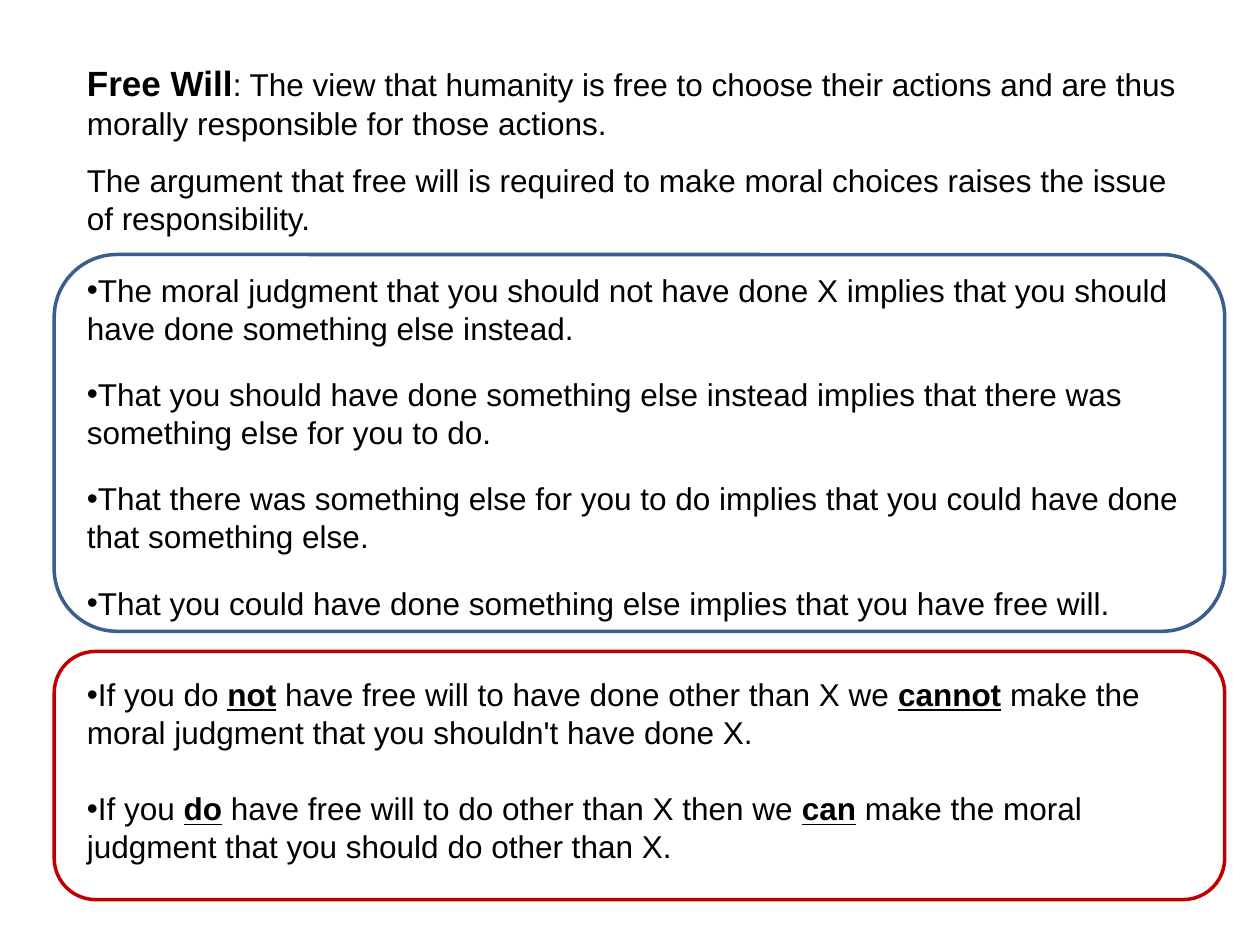
from dataclasses import dataclass

from lxml.etree import SubElement
from pptx import Presentation
from pptx.dml.color import RGBColor
from pptx.enum.shapes import MSO_SHAPE as Shape
from pptx.enum.text import MSO_ANCHOR as Anchor, MSO_AUTO_SIZE as AutoSize, PP_ALIGN as Align
from pptx.oxml.ns import qn
from pptx.util import Inches, Pt


@dataclass(frozen=True)
class Theme:
    font: str = "Arial"
    text: RGBColor = RGBColor(0, 0, 0)
    premises: RGBColor = RGBColor(0x3A, 0x5F, 0x8C)
    conclusions: RGBColor = RGBColor(0xC0, 0, 0)
    term_size: float = 20
    body_size: float = 18
    line_width: float = 2


@dataclass(frozen=True)
class Area:
    left: float
    top: float
    width: float
    height: float

    def inches(self) -> tuple:
        return tuple(Inches(n) for n in (self.left, self.top, self.width, self.height))


@dataclass(frozen=True)
class Span:
    text: str
    bold: bool = False
    underline: bool = False
    size: float | None = None


@dataclass(frozen=True)
class TextBlock:
    area: Area
    paragraphs: list[list[Span]]
    gap: float = 0
    bulleted: bool = False


@dataclass(frozen=True)
class Frame:
    area: Area
    color: RGBColor


THEME = Theme()


def key(text: str) -> Span:
    """A stressed word in a conclusion."""
    return Span(text, bold=True, underline=True)


# Wording and places
DEFINITION = TextBlock(Area(0.59, 0.44, 8.98, 0.74), [[
    Span("Free Will", bold=True, size=THEME.term_size),
    Span(": The view that humanity is free to choose their actions and are thus "
         "morally responsible for those actions."),
]])
ISSUE = TextBlock(Area(0.59, 1.23, 8.98, 0.71), [[
    Span("The argument that free will is required to make moral choices raises "
         "the issue of responsibility."),
]])
PREMISES = TextBlock(Area(0.59, 2.1, 9.13, 2.81), [
    [Span("The moral judgment that you should not have done X implies that you "
          "should have done something else instead.")],
    [Span("That you should have done something else instead implies that there "
          "was something else for you to do.")],
    [Span("That there was something else for you to do implies that you could "
          "have done that something else.")],
    [Span("That you could have done something else implies that you have free will.")],
], gap=16.4, bulleted=True)
CONCLUSIONS = TextBlock(Area(0.59, 5.31, 9.06, 1.59), [
    [Span("If you do "), key("not"),
     Span(" have free will to have done other than X we "), key("cannot"),
     Span(" make the moral judgment that you shouldn't have done X.")],
    [Span("If you "), key("do"),
     Span(" have free will to do other than X then we "), key("can"),
     Span(" make the moral judgment that you should do other than X.")],
], gap=22, bulleted=True)
FRAMES = [
    Frame(Area(0.43, 2.02, 9.29, 2.99), THEME.premises),
    Frame(Area(0.43, 5.17, 9.29, 1.97), THEME.conclusions),
]


def add_bullet(para) -> None:
    """Put a bullet directly before the text, without a hanging indent."""
    properties = para._p.get_or_add_pPr()
    properties.set("marL", "0")
    properties.set("indent", "0")
    SubElement(properties, qn("a:buFont")).set("typeface", THEME.font)
    SubElement(properties, qn("a:buChar")).set("char", "•")


def fill_text(box, block: TextBlock) -> None:
    box.left, box.top, box.width, box.height = block.area.inches()
    frame = box.text_frame
    frame.word_wrap = True
    frame.auto_size = AutoSize.NONE
    frame.vertical_anchor = Anchor.TOP
    for index, spans in enumerate(block.paragraphs):
        para = frame.add_paragraph() if index else frame.paragraphs[0]
        para.alignment = Align.LEFT
        para.space_before = Pt(block.gap if index else 0)
        if block.bulleted:
            add_bullet(para)
        para.font.name = THEME.font
        para.font.size = Pt(THEME.body_size)
        para.font.color.rgb = THEME.text
        for span in spans:
            run = para.add_run()
            run.text = span.text
            if span.bold:
                run.font.bold = True
            if span.underline:
                run.font.underline = True
            if span.size:
                run.font.size = Pt(span.size)


def draw_frame(page, frame: Frame) -> None:
    outline = page.shapes.add_shape(Shape.ROUNDED_RECTANGLE, *frame.area.inches())
    outline.shadow.inherit = False
    outline.fill.background()
    outline.line.color.rgb = frame.color
    outline.line.width = Pt(THEME.line_width)


def main() -> None:
    deck = Presentation()
    deck.slide_width, deck.slide_height = Inches(10), Inches(7.5)
    page = deck.slides.add_slide(deck.slide_layouts.get_by_name("Two Content"))

    # Definition and issue
    fill_text(page.shapes.title, DEFINITION)
    fill_text(page.shapes.add_textbox(*ISSUE.area.inches()), ISSUE)

    # Argument lists
    fill_text(page.placeholders[1], PREMISES)
    fill_text(page.placeholders[2], CONCLUSIONS)

    # Outlines around the lists
    for frame in FRAMES:
        draw_frame(page, frame)

    deck.save("out.pptx")


if __name__ == "__main__":
    main()
